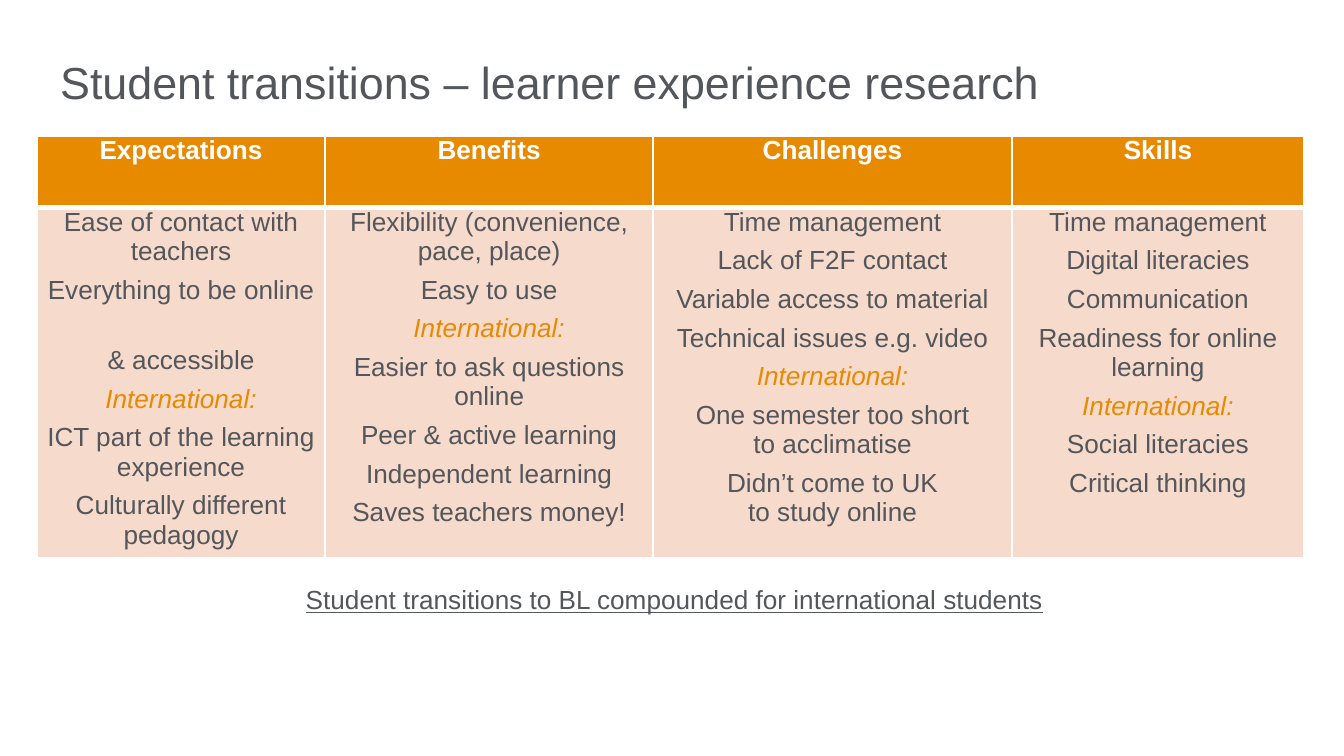
from lxml import etree
from pptx import Presentation
from pptx.dml.color import RGBColor
from pptx.enum import text as tx
from pptx.oxml import ns
from pptx.util import Pt

ORANGE, PEACH, GREY, WHITE = "E88A00", "F6DACC", "53565A", "FFFFFF"
INTERNATIONAL = "International:"

# Heading, width in points, entries
THEMES = [
    ("Expectations", 154.4, [
        "Ease of contact with teachers", "Everything to be online \v& accessible",
        INTERNATIONAL, "ICT part of the learning experience",
        "Culturally different pedagogy"]),
    ("Benefits", 175.8, [
        "Flexibility (convenience, pace, place)", "Easy to use", INTERNATIONAL,
        "Easier to ask questions online", "Peer & active learning",
        "Independent learning", "Saves teachers money!"]),
    ("Challenges", 192.2, [
        "Time management", "Lack of F2F contact", "Variable access to material",
        "Technical issues e.g. video", INTERNATIONAL,
        "One semester too short\vto acclimatise",
        "Didn’t come to UK\vto study online"]),
    ("Skills", 156.4, [
        "Time management", "Digital literacies", "Communication",
        "Readiness for online learning", INTERNATIONAL,
        "Social literacies", "Critical thinking"]),
]


def colour(value):
    return RGBColor.from_string(value)


def write(paragraph, content, size=14, hue=GREY, align="LEFT", after=0,
          bold=False, italic=False, underline=False):
    paragraph.text = content
    paragraph.alignment = getattr(tx.PP_ALIGN, align)
    paragraph.space_after = Pt(after)
    for run in paragraph.runs:
        font = run.font
        font.name, font.size = "Arial", Pt(size)
        font.bold, font.italic, font.underline = bold, italic, underline
        font.color.rgb = colour(hue)


class Deck:
    inset = 5.4
    entry_style = dict(align="CENTER", after=5)

    def __init__(self, width, height):
        self.presentation = Presentation()
        self.presentation.slide_width = Pt(width)
        self.presentation.slide_height = Pt(height)
        self.slide = self.presentation.slides.add_slide(
            self.presentation.slide_layouts[6])

    def label(self, content, left, top, width, height, anchor="TOP", **style):
        frame = self.slide.shapes.add_textbox(
            Pt(left), Pt(top), Pt(width), Pt(height)).text_frame
        frame.word_wrap = True
        frame.vertical_anchor = getattr(tx.MSO_ANCHOR, anchor)
        write(frame.paragraphs[0], content, **style)

    def borders(self, cell, **widths):
        properties = cell._tc.get_or_add_tcPr()
        for side in "LRTB":
            line = etree.SubElement(properties, ns.qn(f"a:ln{side}"),
                                    w=str(Pt(widths.get(side, 1))))
            fill = etree.SubElement(line, ns.qn("a:solidFill"))
            etree.SubElement(fill, ns.qn("a:srgbClr"), val=WHITE)

    def cell(self, cell, entries, fill, thick_side, **style):
        cell.margin_left = cell.margin_right = Pt(self.inset)
        cell.margin_top = cell.margin_bottom = 0
        self.borders(cell, **{thick_side: 3})
        cell.fill.solid()
        cell.fill.fore_color.rgb = colour(fill)
        frame = cell.text_frame
        for i, entry in enumerate(entries):
            paragraph = frame.add_paragraph() if i else frame.paragraphs[0]
            accent = (dict(hue=ORANGE, italic=True)
                      if entry == INTERNATIONAL else {})
            write(paragraph, entry, **{**self.entry_style, **style, **accent})

    def table(self, themes, left, top, row_heights):
        total = sum(width for _, width, _ in themes)
        table = self.slide.shapes.add_table(
            len(row_heights), len(themes), Pt(left), Pt(top),
            Pt(total), Pt(sum(row_heights))).table
        table.horz_banding = False
        for row, height in zip(table.rows, row_heights):
            row.height = Pt(height)
        for column, (heading, width, entries) in enumerate(themes):
            table.columns[column].width = Pt(width)
            self.cell(table.cell(0, column), [heading], ORANGE, "B",
                      hue=WHITE, bold=True)
            self.cell(table.cell(1, column), entries, PEACH, "T")


def main():
    deck = Deck(720, 405)

    # Themes from the research
    deck.table(THEMES, 19.8, 72.7, [38.4, 187.8])

    # Title
    deck.label("Student transitions – learner experience research",
               25.2, 22.3, 595.4, 42.5, anchor="MIDDLE", size=24)

    # Conclusion
    deck.label("Student transitions to BL compounded for international students",
               -12, 309, 578, 24.5, align="RIGHT", underline=True)

    deck.presentation.save("out.pptx")


if __name__ == "__main__":
    main()
